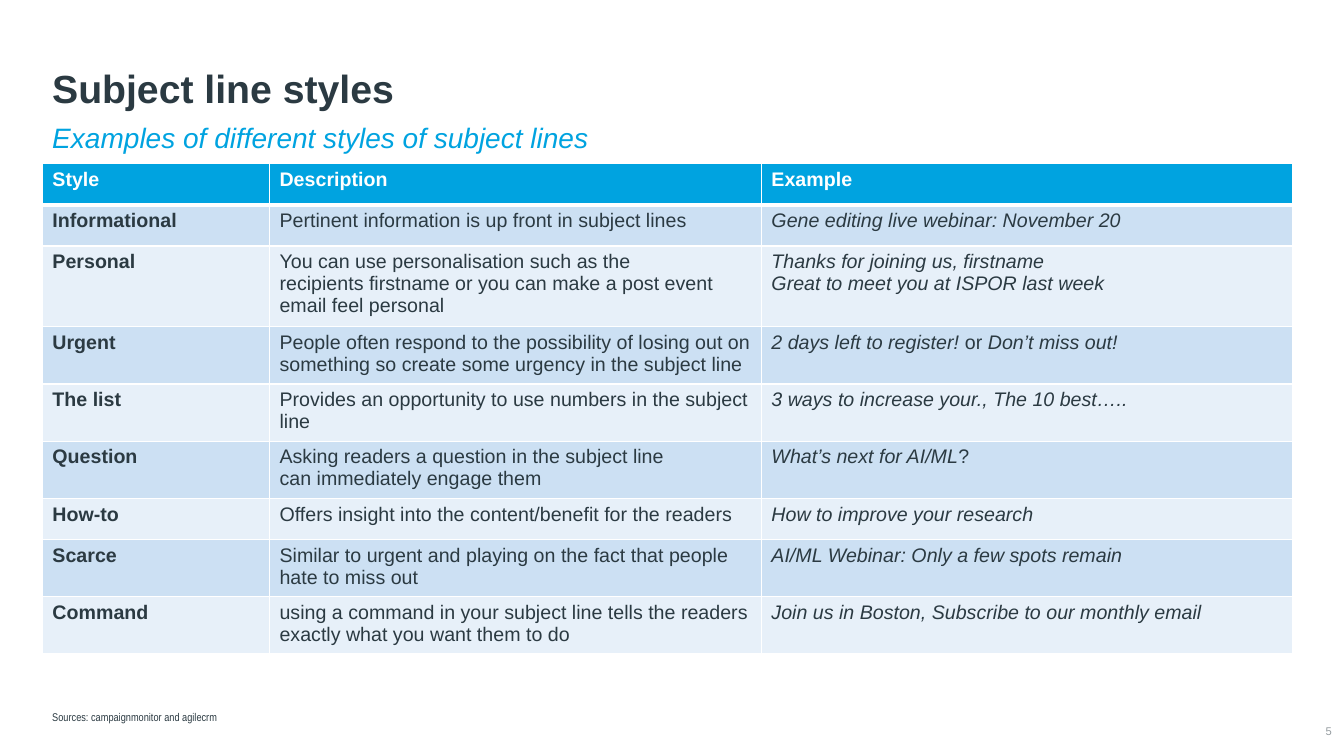
from lxml.etree import SubElement
from pptx import Presentation
from pptx.dml.color import RGBColor
from pptx.enum.text import MSO_ANCHOR, PP_ALIGN
from pptx.oxml.ns import qn
from pptx.util import Inches, Pt

WHITE = RGBColor(0xFF, 0xFF, 0xFF)
INK = RGBColor(0x2B, 0x3A, 0x42)
GREY = RGBColor(0x95, 0x9C, 0xA0)
CYAN = RGBColor(0x00, 0xA3, 0xE0)
BANDS = (RGBColor(0xCC, 0xE0, 0xF3), RGBColor(0xE7, 0xF0, 0xF9))

# Text markup: *italic*, ~ for a non-breaking space, a line break for a new paragraph
NO_BREAK = chr(160)
HEADINGS = ("Style", "Description", "Example")
STYLES = (
    ("Informational", "Pertinent information is up front in subject lines",
     "*Gene editing live webinar: November~20*"),
    ("Personal", "You can use personalisation such as the recipients~firstname "
     "or you can make a post event email feel personal",
     "*Thanks for joining us,~firstname*\n*Great to meet you at ISPOR last~week*"),
    ("Urgent", "People often respond to the possibility of losing out on something "
     "so create some urgency in the subject line",
     "*2 days left to register!~*or~*Don’t miss~out!*"),
    ("The list", "Provides an opportunity to use numbers in the subject line",
     "*3 ways to increase your., The 10 best…..*"),
    ("Question", "Asking readers a question in the subject line can~immediately~engage them",
     "*What’s next for AI/ML*?"),
    ("How-to", "Offers insight into the content/benefit for the readers",
     "*How to improve your~research*"),
    ("Scarce", "Similar to~urgent and playing on the fact that people hate to miss out",
     "*AI/ML Webinar: Only a few~spots~remain*"),
    ("Command", "using a command in your subject line tells the readers "
     "exactly what you want them to do",
     "*Join us in~Boston, Subscribe to our monthly~email*"),
)


def write(frame, text, size=14, color=INK, bold=False, font="Arial",
          align=PP_ALIGN.LEFT, spacing=1.0):
    for number, line in enumerate(text.replace("~", NO_BREAK).split("\n")):
        paragraph = frame.add_paragraph() if number else frame.paragraphs[0]
        paragraph.alignment = align
        paragraph.line_spacing = spacing
        for position, part in enumerate(line.split("*")):
            if part:
                run = paragraph.add_run()
                run.text = part
                run.font.name = font
                run.font.size = Pt(size)
                run.font.color.rgb = color
                run.font.bold = bold
                run.font.italic = position % 2 == 1


class SlideBuilder:
    """Places elements by percentages of the slide's width and height."""

    def __init__(self, deck):
        self.width, self.height = deck.slide_width, deck.slide_height
        self.slide = deck.slides.add_slide(deck.slide_layouts[6])

    def across(self, share):
        return round(self.width * share / 100)

    def down(self, share):
        return round(self.height * share / 100)

    def place(self, left, top, width, height):
        return self.across(left), self.down(top), self.across(width), self.down(height)

    def text(self, text, area, anchor=MSO_ANCHOR.TOP, inset=True, space_below=0, **style):
        frame = self.slide.shapes.add_textbox(*self.place(*area)).text_frame
        frame.word_wrap = True
        frame.vertical_anchor = anchor
        if not inset:
            frame.margin_left = frame.margin_right = 0
            frame.margin_top = frame.margin_bottom = 0
        if space_below:
            frame.margin_bottom = self.down(space_below)
        write(frame, text, **style)

    def table(self, rows, area, columns, row_height):
        holder = self.slide.shapes.add_table(len(rows), len(columns), *self.place(*area))
        for column, share in zip(holder.table.columns, columns):
            column.width = self.across(share)
        for row_number, (row, texts) in enumerate(zip(holder.table.rows, rows)):
            row.height = self.down(row_height)
            header = row_number == 0
            for column_number, (cell, text) in enumerate(zip(row.cells, texts)):
                self.borders(cell, top=3 if row_number == 1 else 1, bottom=3 if header else 1)
                cell.fill.solid()
                cell.fill.fore_color.rgb = CYAN if header else BANDS[(row_number - 1) % 2]
                write(cell.text_frame, text, color=WHITE if header else INK,
                      bold=header or column_number == 0)
        holder.height = self.down(area[3])

    def borders(self, cell, top, bottom):
        properties = cell._tc.get_or_add_tcPr()
        for side, points in (("L", 1), ("R", 1), ("T", top), ("B", bottom)):
            line = SubElement(properties, qn(f"a:ln{side}"), w=str(Pt(points)))
            fill = SubElement(line, qn("a:solidFill"))
            SubElement(fill, qn("a:srgbClr"), val=str(WHITE))


def main():
    deck = Presentation()
    deck.slide_width, deck.slide_height = Inches(13.33), Inches(7.5)
    page = SlideBuilder(deck)
    left, width = 3.15, 93

    # Heading
    page.text("*Examples of different styles of subject lines*", (left, 15.73, width, 5.87),
              size=20, color=CYAN, spacing=0.9)
    page.text("Subject line styles", (left, 4.27, width, 11.2), anchor=MSO_ANCHOR.BOTTOM,
              size=28, bold=True, spacing=0.9)

    # Subject line styles
    page.table((HEADINGS, *STYLES), (left, 21.6, width, 64.67),
               columns=(16.9, 36.6, 39.5), row_height=5.47)

    # Footer
    page.text("Sources: campaignmonitor and agilecrm", (left, 93.2, 76.14, 4.93),
              anchor=MSO_ANCHOR.BOTTOM, space_below=2.35, size=8, font="Arial Narrow")
    page.text("5", (96.17, 95.47, 2.93, 2.53), anchor=MSO_ANCHOR.MIDDLE, inset=False,
              size=8, color=GREY, align=PP_ALIGN.RIGHT)

    deck.save("out.pptx")


if __name__ == "__main__":
    main()
